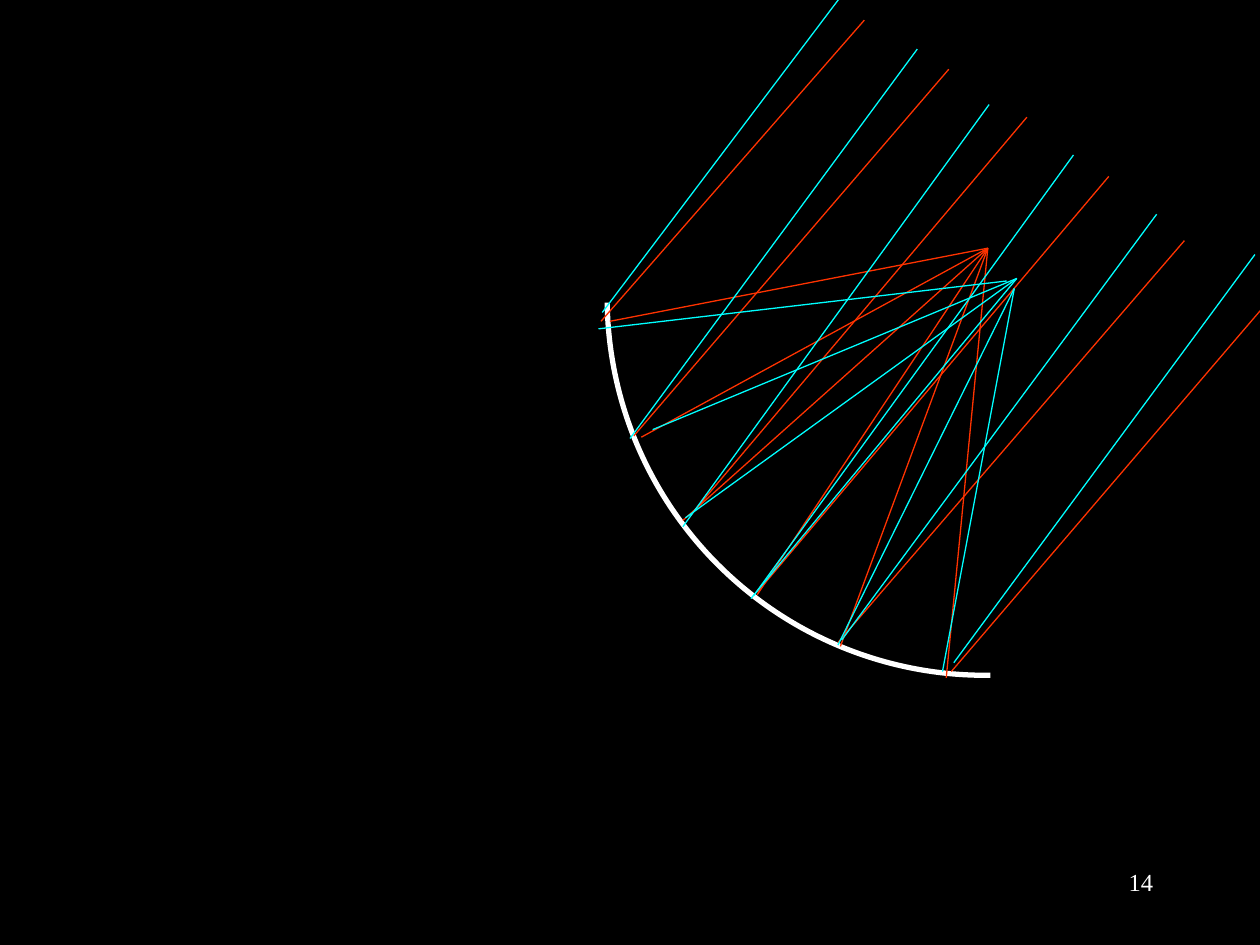
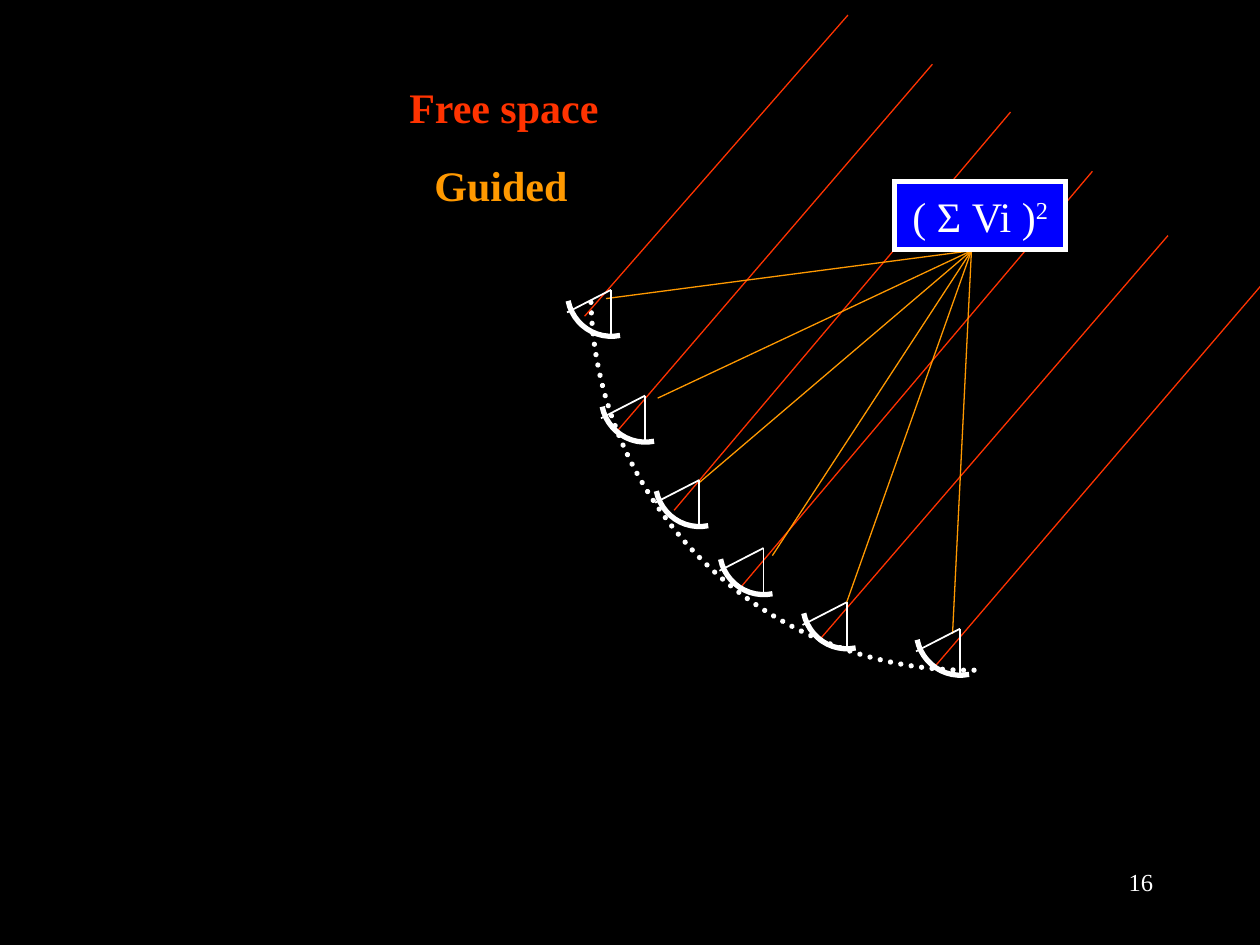
from lxml import etree
from pptx import Presentation
from pptx import util as u
from pptx.dml.color import RGBColor
from pptx.enum import dml, shapes, text
from pptx.oxml import ns

BLACK, WHITE, BLUE = "000000", "FFFFFF", "0000FF"
RED, CYAN, ORANGE = "FF3300", "00FFFF", "FF9900"
FONT = "Times New Roman"
QUARTER_TURN = 90 * 60000


def draw_stroke(slide, start, end, colour, width=0.75, rotation=None, dotted=False):
    """Draw a straight connector, or a rotated quarter arc when a rotation is given."""
    (x1, y1), (x2, y2) = [(u.Inches(x), u.Inches(y)) for x, y in (start, end)]
    if rotation is None:
        shape = slide.shapes.add_connector(
            shapes.MSO_CONNECTOR.STRAIGHT, x1, y1, x2, y2)
    else:
        builder = slide.shapes.build_freeform(x1, y1, scale=1.0)
        builder.add_line_segments([(x2, y2)], close=False)
        shape = builder.convert_to_shape()
        shape.rotation = rotation
        shape.fill.background()
        # Bend the straight segment into a quarter of a circle
        segment = next(shape.element.iter(ns.qn("a:lnTo")))
        arc = etree.Element(ns.qn("a:arcTo"))
        arc.set("wR", str(abs(x2 - x1)))
        arc.set("hR", str(abs(y2 - y1)))
        arc.set("stAng", str(QUARTER_TURN * (3 if y2 > y1 else 1)))
        arc.set("swAng", str(QUARTER_TURN * (1 if y2 > y1 else -1)))
        segment.getparent().replace(segment, arc)
    shape.line.color.rgb = RGBColor.from_string(colour)
    shape.line.width = u.Pt(width)
    properties = shape.element.spPr
    if dotted:
        shape.line.dash_style = dml.MSO_LINE.ROUND_DOT
        properties.find(ns.qn("a:ln")).set("cap", "rnd")
    etree.SubElement(properties, ns.qn("a:effectLst"))


def write_text(shape, content, size=24, colour=WHITE, bold=False,
               align=text.PP_ALIGN.LEFT, wrap=True, grow=True, superscript=""):
    frame = shape.text_frame
    frame.word_wrap = wrap
    if grow:
        frame.auto_size = text.MSO_AUTO_SIZE.SHAPE_TO_FIT_TEXT
    paragraph = frame.paragraphs[0]
    paragraph.alignment = align
    for part in filter(None, (content, superscript)):
        run = paragraph.add_run()
        run.text = part
        run.font.name = FONT
        run.font.size = u.Pt(size)
        run.font.bold = bold
        run.font.color.rgb = RGBColor.from_string(colour)
    if superscript:
        run.font._element.set("baseline", "30000")


presentation = Presentation()
presentation.slide_width = u.Inches(10)
presentation.slide_height = u.Inches(7.5)

# Shared geometry: the mirror and the incoming red rays
mirror_left, mirror_top, mirror_size = 4.84, 2.38, 3
incoming_rays = [
    ((4.77, 2.55), (6.86, 0.16)), ((5.03, 3.46), (7.53, 0.55)),
    ((5.48, 4.09), (8.15, 0.93)), ((6.01, 4.70), (8.80, 1.40)),
    ((6.65, 5.10), (9.40, 1.91)), ((7.55, 5.33), (10.17, 2.27)),
]

# Page number, mirror and incoming rays on both slides
slides = []
for number, shift_x, shift_y, dotted in (("14", 0, 0, False),
                                         ("16", -0.13, -0.04, True)):
    slide = presentation.slides.add_slide(presentation.slide_layouts[6])
    slides.append(slide)
    slide.background.fill.solid()
    slide.background.fill.fore_color.rgb = RGBColor.from_string(BLACK)
    number_box = slide.shapes.add_textbox(
        u.Inches(7.17), u.Inches(6.83), u.Inches(2.08), u.Inches(0.5))
    write_text(number_box, number, size=14, align=text.PP_ALIGN.RIGHT, grow=False)

    left, top = mirror_left + shift_x, mirror_top + shift_y
    draw_stroke(slide, (left, top), (left + mirror_size, top + mirror_size),
                WHITE, width=3, rotation=179.2, dotted=dotted)
    for ray in incoming_rays:
        start, end = [(x + shift_x, y + shift_y) for x, y in ray]
        draw_stroke(slide, start, end, RED)

mirror_slide, array_slide = slides

# Mirror slide: reflected red rays meet in one focus
for mirror_point in ((4.84, 2.55), (5.09, 3.47), (5.42, 4.13),
                     (6.01, 4.72), (6.67, 5.13), (7.51, 5.38)):
    draw_stroke(mirror_slide, (7.84, 1.97), mirror_point, RED)

# Mirror slide: cyan rays from a second direction and their focus
cyan_rays = [
    ((7.99, 2.23), (4.75, 2.61)), ((8.07, 2.21), (5.18, 3.41)),
    ((8.07, 2.21), (5.44, 4.11)), ((8.07, 2.21), (5.96, 4.75)),
    ((4.78, 2.48), (6.69, -0.05)), ((5.00, 3.48), (7.28, 0.39)),
    ((5.42, 4.18), (7.85, 0.83)), ((5.98, 4.73), (8.52, 1.23)),
    ((6.68, 5.08), (9.18, 1.70)), ((7.57, 5.26), (9.96, 2.02)),
    ((8.05, 2.29), (7.48, 5.33)), ((8.05, 2.29), (6.65, 5.12)),
]
for start, end in cyan_rays:
    draw_stroke(mirror_slide, start, end, CYAN)

# Array slide: guided paths from the dishes to the combiner
for dish_point in ((4.81, 2.37), (5.22, 3.16), (5.55, 3.83),
                   (6.13, 4.41), (6.72, 4.78), (7.56, 5.03)):
    draw_stroke(array_slide, (7.71, 1.99), dish_point, ORANGE)

# Array slide: small dishes, each placed by its feed point
dish_size = 0.35
for feed_x, feed_y in ((6.06, 4.35), (4.85, 2.30), (5.12, 3.14),
                       (5.55, 3.81), (6.72, 4.78), (7.62, 4.99)):
    left, top = feed_x - 0.31, feed_y + 0.05
    draw_stroke(array_slide, (left, top + dish_size), (left + dish_size, top),
                WHITE, width=3, rotation=78.7)
    for strut_x, strut_y in ((-0.35, 0.18), (0, 0.36)):
        strut_end = (feed_x + strut_x, feed_y + strut_y)
        draw_stroke(array_slide, (feed_x, feed_y), strut_end, WHITE, width=1)

# Array slide: combiner box with sharp corners
combiner = array_slide.shapes.add_shape(
    shapes.MSO_SHAPE.RECTANGLE,
    u.Inches(7.1), u.Inches(1.44), u.Inches(1.36), u.Inches(0.54))
combiner.shadow.inherit = False
combiner.fill.solid()
combiner.fill.fore_color.rgb = RGBColor.from_string(BLUE)
combiner.line.color.rgb = RGBColor.from_string(WHITE)
combiner.line.width = u.Pt(3)
outline = combiner.element.spPr.find(ns.qn("a:ln"))
etree.SubElement(outline, ns.qn("a:miter")).set("lim", "800000")
combiner.text_frame.vertical_anchor = text.MSO_ANCHOR.MIDDLE
write_text(combiner, "( Σ Vi )", superscript="2", align=text.PP_ALIGN.CENTER)

# Array slide: key to the ray colours
for label, colour, left, top, width in (("Free space", RED, 3.15, 0.6, 1.71),
                                        ("Guided", ORANGE, 3.35, 1.22, 1.26)):
    label_box = array_slide.shapes.add_textbox(
        u.Inches(left), u.Inches(top), u.Inches(width), u.Inches(0.5))
    write_text(label_box, label, colour=colour, bold=True, wrap=False)

presentation.save("out.pptx")
